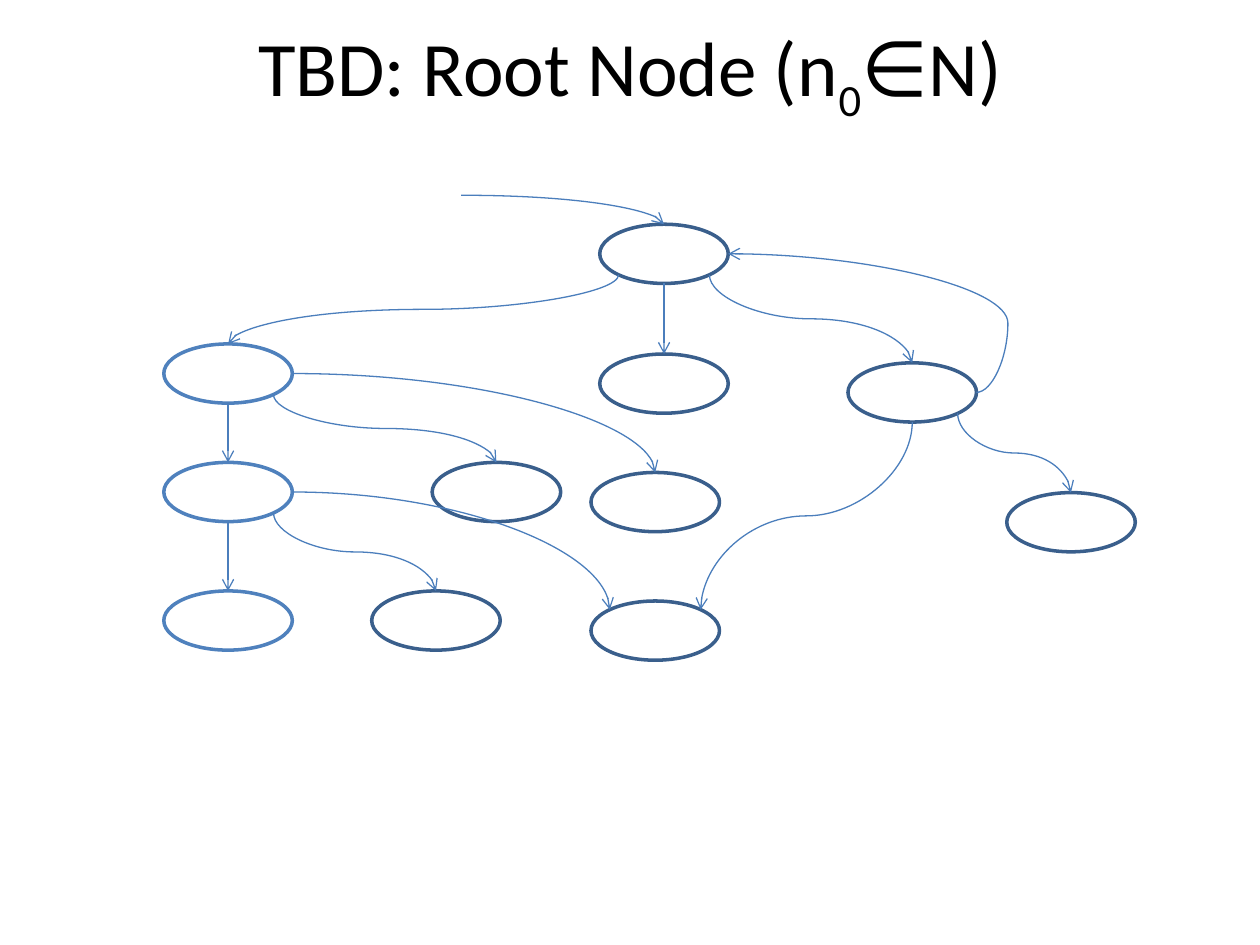
import math

import lxml.etree
import pptx
import pptx.dml.color
import pptx.enum.shapes
import pptx.enum.text
import pptx.oxml.ns
import pptx.util

Inches = pptx.util.Inches
qn = pptx.oxml.ns.qn

NODE_WIDTH, NODE_HEIGHT = 1.02, 0.47
DARK, LIGHT, EDGE = "3A5F8C", "4F81BD", "4B7EBC"

# Node name: left, top, outline colour
NODES = {
    "root": (4.76, 1.78, DARK),
    "middle": (4.76, 2.81, DARK),
    "right": (6.73, 2.88, DARK),
    "left": (1.3, 2.73, LIGHT),
    "left child": (1.3, 3.67, LIGHT),
    "left second": (3.43, 3.67, DARK),
    "left third": (4.69, 3.75, DARK),
    "leaf first": (1.3, 4.69, LIGHT),
    "leaf second": (2.95, 4.69, DARK),
    "shared leaf": (4.69, 4.77, DARK),
    "right leaf": (7.99, 3.91, DARK),
}

# Ellipse connection sites run counter-clockwise from the top
SITES = ["top", "top left", "side left", "bottom left",
         "bottom", "bottom right", "side right", "top right"]

# Start node, start site, end node, end site, route
EDGES = [
    ("root", "bottom", "middle", "top", "drop"),
    ("root", "bottom right", "right", "top", "drop"),
    ("root", "bottom left", "left", "top", "drop"),
    ("left", "bottom", "left child", "top", "drop"),
    ("left", "bottom right", "left second", "top", "drop"),
    ("left", "side right", "left third", "top", "corner"),
    ("left child", "bottom", "leaf first", "top", "drop"),
    ("left child", "bottom right", "leaf second", "top", "drop"),
    ("left child", "side right", "shared leaf", "top left", "corner"),
    ("right", "bottom", "shared leaf", "top right", "drop"),
    ("right", "bottom right", "right leaf", "top", "drop"),
    ("right", "side right", "root", "side right", "loop"),
]
ENTRY_START = (3.66, 1.55)
LOOP_ADJUST = -12700


def color(value):
    return pptx.dml.color.RGBColor.from_string(value)


def set_format(target, values):
    for name, value in values.items():
        setattr(target, name, value)


def add_title(page, left, top, width, height):
    box = page.shapes.add_textbox(*map(Inches, (left, top, width, height)))
    set_format(box.text_frame, {
        "word_wrap": True,
        "vertical_anchor": pptx.enum.text.MSO_ANCHOR.MIDDLE,
    })
    para = box.text_frame.paragraphs[0]
    para.alignment = pptx.enum.text.PP_ALIGN.CENTER
    for text, baseline in [("TBD: Root Node (n", 0), ("0", -25000), ("∈N)", 0)]:
        span = para.add_run()
        span.text = text
        set_format(span.font, {"name": "Calibri", "size": pptx.util.Pt(44)})
        span.font.color.rgb = color("000000")
        if baseline:
            span.font._element.set("baseline", str(baseline))


def add_node(page, left, top, outline):
    node = page.shapes.add_shape(
        pptx.enum.shapes.MSO_SHAPE.OVAL,
        *map(Inches, (left, top, NODE_WIDTH, NODE_HEIGHT)))
    node.shadow.inherit = False
    node.fill.solid()
    node.fill.fore_color.rgb = color("FFFFFF")
    node.line.color.rgb = color(outline)
    node.line.width = pptx.util.Pt(2)
    return node


def site_point(name, site):
    left, top, _ = NODES[name]
    angle = math.radians(90 + 45 * SITES.index(site))
    return (left + NODE_WIDTH / 2 * (1 + math.cos(angle)),
            top + NODE_HEIGHT / 2 * (1 - math.sin(angle)))


def add_edge(page, start, end, route):
    (x1, y1), (x2, y2) = start, end
    turn = 0
    if route == "drop":
        # A curve that leaves downwards is a sideways curve turned about its centre
        center_x, center_y = (x1 + x2) / 2, (y1 + y2) / 2
        rightward = x2 - x1 > 0.01
        turn = 270 if rightward else 90
        half_width = (y2 - y1) / 2 * (1 if rightward else -1)
        half_height = abs(x2 - x1) / 2
        x1, x2 = center_x + half_width, center_x - half_width
        y1, y2 = center_y - half_height, center_y + half_height
    edge = page.shapes.add_connector(
        pptx.enum.shapes.MSO_CONNECTOR.CURVE, *map(Inches, (x1, y1, x2, y2)))
    edge.line.color.rgb = color(EDGE)
    edge.line.width = pptx.util.Pt(0.75)

    # Turn, curve type, arrowhead and empty effect list
    properties = edge._element.spPr
    if turn:
        properties.find(qn("a:xfrm")).set("rot", str(turn * 60000))
    geometry = properties.find(qn("a:prstGeom"))
    if route == "corner":
        geometry.set("prst", "curvedConnector2")
    else:
        adjust = LOOP_ADJUST if route == "loop" else 50000
        lxml.etree.SubElement(geometry.find(qn("a:avLst")), qn("a:gd"),
                              name="adj1", fmla=f"val {adjust}")
    lxml.etree.SubElement(properties.find(qn("a:ln")), qn("a:tailEnd"), type="arrow")
    lxml.etree.SubElement(properties, qn("a:effectLst"))
    return edge


def glue(edge, tag, node, site):
    links = edge._element.find(".//" + qn("p:cNvCxnSpPr"))
    lxml.etree.SubElement(links, qn(tag), id=str(node.shape_id),
                          idx=str(SITES.index(site)))


def add_graph(page):
    nodes = {name: add_node(page, *values) for name, values in NODES.items()}
    for source, leave, target, arrive, route in EDGES:
        edge = add_edge(page, site_point(source, leave),
                        site_point(target, arrive), route)
        glue(edge, "a:stCxn", nodes[source], leave)
        glue(edge, "a:endCxn", nodes[target], arrive)
    # Entry arrow into the root
    entry = add_edge(page, ENTRY_START, site_point("root", "top"), "corner")
    glue(entry, "a:endCxn", nodes["root"], "top")


def main():
    deck = pptx.Presentation()
    set_format(deck, {"slide_width": Inches(10), "slide_height": Inches(7.5)})
    page = deck.slides.add_slide(deck.slide_layouts[6])
    add_graph(page)
    add_title(page, 0.5, 0, 9, 1.15)
    deck.save("out.pptx")


if __name__ == "__main__":
    main()
